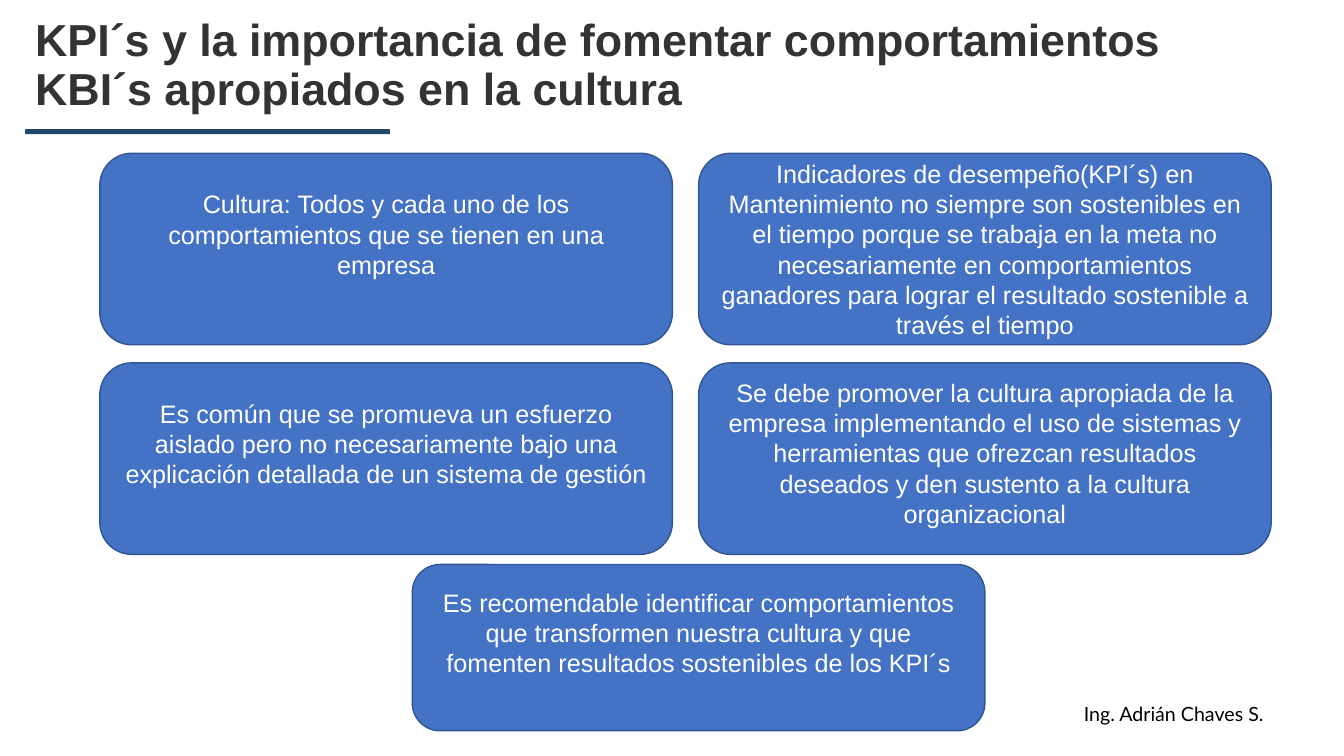
"""Build a slide on KPIs and the behaviours that sustain them."""
from pptx import Presentation
from pptx.dml.color import RGBColor
from pptx.enum.shapes import MSO_SHAPE
from pptx.enum.text import MSO_ANCHOR, PP_ALIGN
from pptx.util import Pt

ROUNDED = MSO_SHAPE.ROUNDED_RECTANGLE
TOP, MIDDLE, BOTTOM = MSO_ANCHOR.TOP, MSO_ANCHOR.MIDDLE, MSO_ANCHOR.BOTTOM
CENTER, LEFT = PP_ALIGN.CENTER, PP_ALIGN.LEFT
WHITE = RGBColor(0xFF, 0xFF, 0xFF)
BLACK = RGBColor(0x00, 0x00, 0x00)
CHARCOAL = RGBColor(0x33, 0x33, 0x33)
NAVY = RGBColor(0x20, 0x49, 0x69)
BLUE = RGBColor(0x44, 0x72, 0xC4)
DARK_BLUE = RGBColor(0x32, 0x54, 0x91)

CARD_WIDTH = 409
CARD_HEIGHT = 136.8
LEFT_COLUMN, RIGHT_COLUMN = 71.3, 499
FIRST_ROW, SECOND_ROW = 109.5, 259.2
INSET = 3.6
RAISED_INSET = 25

deck = Presentation()
deck.slide_width, deck.slide_height = Pt(960), Pt(540)
page = deck.slides.add_slide(deck.slide_layouts[6])


def write(shape, text, size, color, font="Arial", align=CENTER, anchor=MIDDLE, bold=False):
    frame = shape.text_frame
    frame.text = text
    frame.word_wrap = True
    frame.vertical_anchor = anchor
    para = frame.paragraphs[0]
    para.alignment = align
    span = para.runs[0]
    span.font.name = font
    span.font.size = Pt(size)
    span.font.bold = bold
    span.font.color.rgb = color
    return frame


def add_rounded(left, top, width, height, fill):
    shape = page.shapes.add_shape(ROUNDED, Pt(left), Pt(top), Pt(width), Pt(height))
    shape.shadow.inherit = False
    shape.fill.solid()
    shape.fill.fore_color.rgb = fill
    shape.line.fill.background()
    return shape


author = page.shapes.add_textbox(Pt(726.5), Pt(498.2), Pt(223.9), Pt(24.5))
write(author, "Ing. Adrián Chaves S.", 14, BLACK, font="Lato", anchor=TOP)

add_rounded(18, 92.2, 260.6, 3.6, NAVY)

title = page.shapes.add_textbox(Pt(18), Pt(18), Pt(822.2), Pt(67.7))
title_frame = write(
    title,
    "KPI´s y la importancia de fomentar comportamientos KBI´s apropiados en la cultura",
    32, CHARCOAL, align=LEFT, anchor=BOTTOM, bold=True,
)
title_frame.paragraphs[0].line_spacing = 0.9

cards = [
    (LEFT_COLUMN, FIRST_ROW, CARD_HEIGHT, MIDDLE, RAISED_INSET,
     "Cultura: Todos y cada uno de los comportamientos que se tienen en una empresa"),
    (LEFT_COLUMN, SECOND_ROW, CARD_HEIGHT, MIDDLE, RAISED_INSET,
     "Es común que se promueva un esfuerzo aislado pero no necesariamente bajo una "
     "explicación detallada de un sistema de gestión"),
    (RIGHT_COLUMN, FIRST_ROW, CARD_HEIGHT, MIDDLE, INSET,
     "Indicadores de desempeño(KPI´s) en Mantenimiento no siempre son sostenibles en el "
     "tiempo porque se trabaja en la meta no necesariamente en comportamientos ganadores "
     "para lograr el resultado sostenible a través el tiempo"),
    (RIGHT_COLUMN, SECOND_ROW, CARD_HEIGHT, TOP, INSET,
     "Se debe promover la cultura apropiada de la empresa implementando el uso de sistemas "
     "y herramientas que ofrezcan resultados deseados y den sustento a la cultura "
     "organizacional"),
    (294.5, 403.2, 118.8, MIDDLE, RAISED_INSET,
     "Es recomendable identificar comportamientos que transformen nuestra cultura y que "
     "fomenten resultados sostenibles de los KPI´s"),
]
for left, top, height, anchor, bottom_inset, text in cards:
    card = add_rounded(left, top, CARD_WIDTH, height, BLUE)
    card.line.color.rgb = DARK_BLUE
    card.line.width = Pt(1)
    frame = write(card, text, 18, WHITE, anchor=anchor)
    frame.margin_bottom = Pt(bottom_inset)

deck.save("out.pptx")
